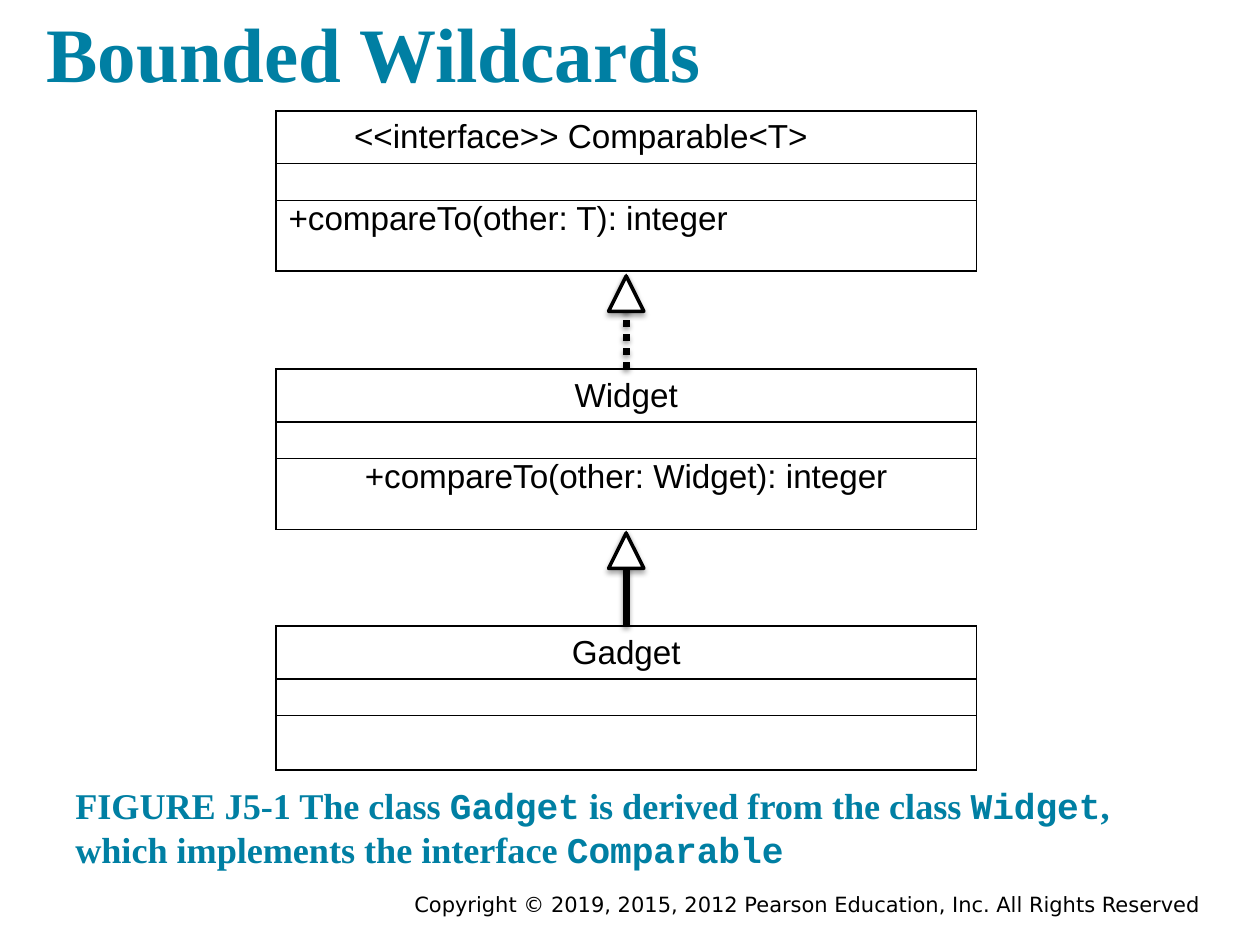
"""Builds the Bounded Wildcards slide with its three-class UML diagram."""
from dataclasses import dataclass

from lxml.etree import SubElement
from pptx import Presentation
from pptx.dml.color import RGBColor as Color
from pptx.enum.dml import MSO_LINE as Dash
from pptx.enum.shapes import MSO_CONNECTOR as Connector, MSO_SHAPE as Shape
from pptx.enum.text import MSO_ANCHOR as Anchor, PP_ALIGN as Align
from pptx.oxml import parse_xml
from pptx.oxml.ns import nsdecls, qn
from pptx.util import Inches, Pt


@dataclass(frozen=True)
class Theme:
    accent: str = "007FA3"
    ink: str = "000000"
    paper: str = "FFFFFF"
    serif: str = "Times New Roman"
    code: str = "Courier New"
    sans: str = "Arial"
    footer: str = "DejaVu Sans"
    title_size: float = 44
    caption_size: float = 20.7
    class_size: float = 19
    footer_size: float = 12
    empty_size: float = 12
    border: float = 1
    outline: float = 2
    stem: float = 4


THEME = Theme()
WIDTH, HEIGHT = Inches(10), Inches(7.5)

TITLE = [("Bounded Wildcards", THEME.serif)]
CAPTION = [
    ("FIGURE J5-1 The class ", THEME.serif),
    ("Gadget", THEME.code),
    (" is derived from the class ", THEME.serif),
    ("Widget", THEME.code),
    (", which implements the interface ", THEME.serif),
    ("Comparable", THEME.code),
]
COPYRIGHT = [("Copyright © 2019, 2015, 2012 Pearson Education, Inc. All Rights Reserved", THEME.footer)]

CLASSES = [
    {"top": 11.73, "rows": (5.6, 3.87, 7.47), "align": Align.LEFT, "indents": (0.62, 0, 0.1),
     "cells": ("<<interface>> Comparable<T>", "", "+compareTo(other: T): integer")},
    {"top": 39.07, "rows": (5.6, 3.87, 7.47), "align": Align.CENTER, "indents": (0.07, 0, 0.07),
     "cells": ("Widget", "", "+compareTo(other: Widget): integer")},
    {"top": 66.27, "rows": (5.6, 3.87, 5.73), "align": Align.CENTER, "indents": (0.07, 0, 0.07),
     "cells": ("Gadget", "", "")},
]
CLASS_LEFT, CLASS_WIDTH = 21.9, 55.6
ARROW_RISE = 10.13
HEAD_SIZE = Inches(0.28)
HEAD_DROP = Inches(0.02)


def across(percent):
    return round(WIDTH * percent / 100)


def down(percent):
    return round(HEIGHT * percent / 100)


def style(run, font, size, color, bold=False):
    run.font.name = font
    run.font.size = Pt(size)
    run.font.bold = bold
    run.font.color.rgb = Color.from_string(color)


def add_text(slide, area, pieces, size, color, bold=True, align=Align.LEFT,
             anchor=Anchor.BOTTOM, inset=0.1):
    left, top, width, height = area
    box = slide.shapes.add_textbox(across(left), down(top), across(width), down(height))
    frame = box.text_frame
    frame.word_wrap = True
    frame.vertical_anchor = anchor
    frame.margin_left = frame.margin_right = Inches(inset)
    frame.margin_top = frame.margin_bottom = Inches(inset)
    paragraph = frame.paragraphs[0]
    paragraph.alignment = align
    for text, font in pieces:
        run = paragraph.add_run()
        run.text = text
        style(run, font, size, color, bold)


def add_borders(cell):
    cell.fill.background()
    properties = cell._tc.get_or_add_tcPr()
    for position, side in enumerate(("lnL", "lnR", "lnT", "lnB")):
        properties.insert(position, parse_xml(
            f'<a:{side} {nsdecls("a")} w="{Pt(THEME.border)}"><a:solidFill>'
            f'<a:srgbClr val="{THEME.ink}"/></a:solidFill></a:{side}>'))


def add_class(slide, box):
    table = slide.shapes.add_table(
        len(box["rows"]), 1, across(CLASS_LEFT), down(box["top"]),
        across(CLASS_WIDTH), down(sum(box["rows"]))).table
    table.first_row = table.horz_banding = False
    for index, (height, text, indent) in enumerate(zip(box["rows"], box["cells"], box["indents"])):
        table.rows[index].height = down(height)
        cell = table.cell(index, 0)
        cell.margin_left, cell.margin_right = Inches(indent), Inches(0.07)
        cell.margin_top = cell.margin_bottom = 0
        cell.vertical_anchor = Anchor.TOP if index else Anchor.MIDDLE
        add_borders(cell)
        paragraph = cell.text_frame.paragraphs[0]
        if text:
            paragraph.text = text
            paragraph.alignment = box["align"]
            style(paragraph.runs[0], THEME.sans, THEME.class_size, THEME.ink)
        else:
            SubElement(paragraph._p, qn("a:endParaRPr"), sz=str(THEME.empty_size * 100))


def add_shadow(shape, opacity, distance):
    properties = shape._element.spPr
    for effects in properties.findall(qn("a:effectLst")):
        properties.remove(effects)
    properties.append(parse_xml(
        f'<a:effectLst {nsdecls("a")}><a:outerShdw blurRad="{Pt(3)}" dist="{Pt(distance)}" '
        f'dir="5400000" rotWithShape="0"><a:srgbClr val="{THEME.ink}">'
        f'<a:alpha val="{opacity * 1000}"/></a:srgbClr></a:outerShdw></a:effectLst>'))


def add_arrow(slide, child, dash):
    group = slide.shapes.add_group_shape()
    center = across(CLASS_LEFT + CLASS_WIDTH / 2)
    tip = down(child["top"] - ARROW_RISE)
    stem = group.shapes.add_connector(Connector.STRAIGHT, center, down(child["top"]), center, tip)
    stem.line.color.rgb = Color.from_string(THEME.ink)
    stem.line.width = Pt(THEME.stem)
    stem.line.dash_style = dash
    SubElement(stem.line._get_or_add_ln(), qn("a:tailEnd"), type="triangle")
    add_shadow(stem, 38, 1.6)

    head = group.shapes.add_shape(
        Shape.RIGHT_ARROW, center - HEAD_SIZE // 2, tip + HEAD_DROP, HEAD_SIZE, HEAD_SIZE)
    head.adjustments[0], head.adjustments[1] = 0.32, 1
    head.rotation = 270
    head.fill.solid()
    head.fill.fore_color.rgb = Color.from_string(THEME.paper)
    head.line.color.rgb = Color.from_string(THEME.ink)
    head.line.width = Pt(THEME.outline)
    add_shadow(head, 35, 1.8)


def main():
    presentation = Presentation()
    presentation.slide_width, presentation.slide_height = WIDTH, HEIGHT
    slide = presentation.slides.add_slide(presentation.slide_layouts[6])
    add_text(slide, (17.5, 93.73, 78.3, 4.13), COPYRIGHT, THEME.footer_size, THEME.ink,
             bold=False, align=Align.RIGHT, anchor=Anchor.TOP, inset=0.05)
    add_text(slide, (2.7, 0, 93.1, 11.73), TITLE, THEME.title_size, THEME.accent)
    add_text(slide, (5, 81.73, 90, 11.73), CAPTION, THEME.caption_size, THEME.accent)
    for box in CLASSES:
        add_class(slide, box)
    for child, dash in zip(CLASSES[1:], (Dash.ROUND_DOT, Dash.SOLID)):
        add_arrow(slide, child, dash)
    presentation.save("out.pptx")


if __name__ == "__main__":
    main()
